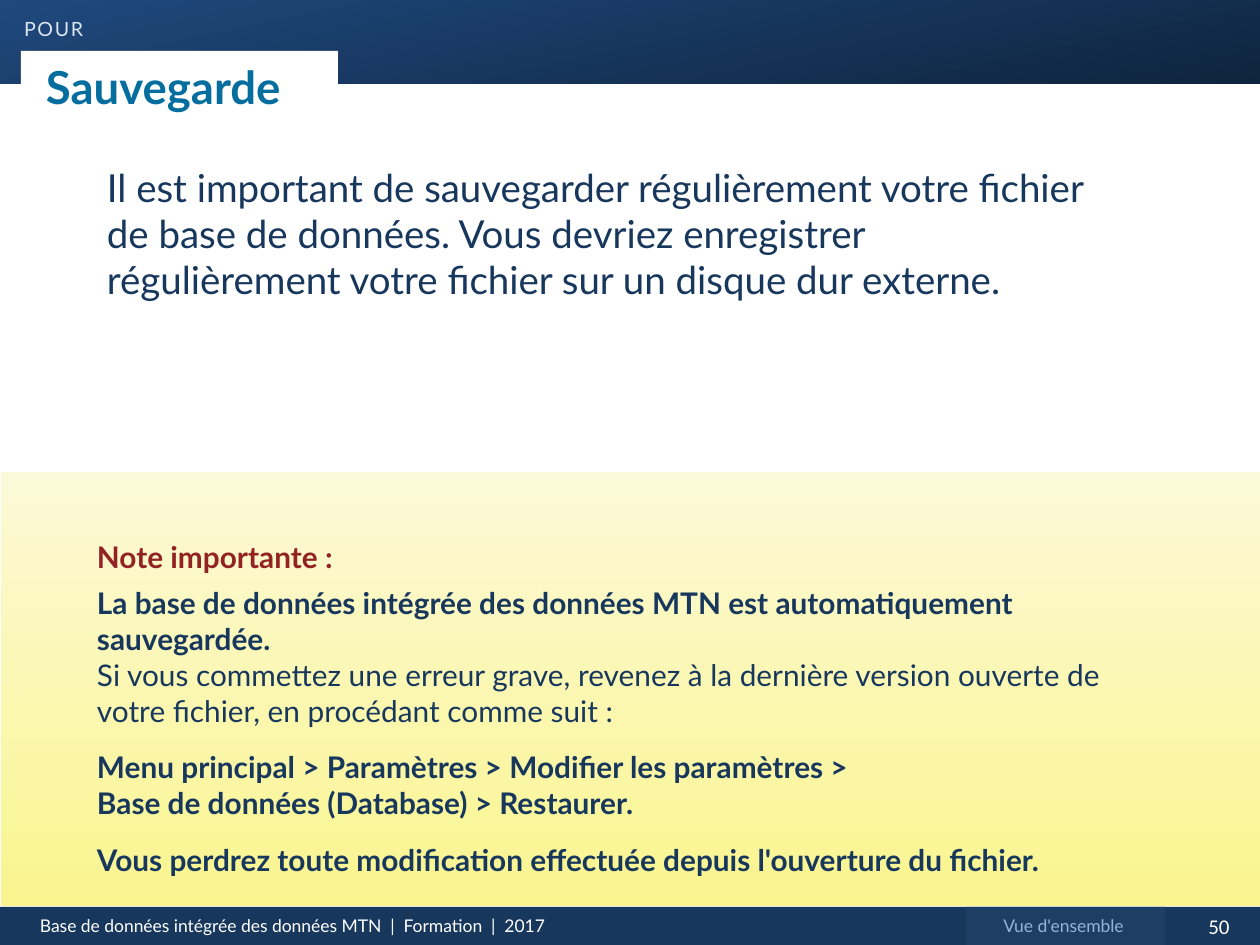
import pptx
import pptx.util
import pptx.dml.color
import pptx.enum.shapes
import pptx.enum.text

RGB = pptx.dml.color.RGBColor
SHAPE = pptx.enum.shapes.MSO_SHAPE
ALIGN = pptx.enum.text.PP_ALIGN
ANCHOR = pptx.enum.text.MSO_ANCHOR

WHITE = RGB(0xFF, 0xFF, 0xFF)
NAVY = RGB(0x17, 0x37, 0x5D)
TAB = RGB(0x1E, 0x3F, 0x65)
TOP = RGB(0x1F, 0x49, 0x7D), RGB(0x0F, 0x24, 0x3E)
YELLOW = RGB(0xFA, 0xF5, 0x8E), RGB(0xFC, 0xF9, 0xD8)
SKY = RGB(0x95, 0xB3, 0xD7)
PALE = RGB(0xDC, 0xE6, 0xF2)
TEAL = RGB(0x06, 0x6E, 0x9F)
RED = RGB(0x93, 0x23, 0x23)

SCALE = 914400 / 126
BREAK = "\n"

# Paragraphs: (space after in points, runs); runs: (text, colour, bold)
KICKER = [(0, [("pour", PALE, False)])]
TITLE = [(0, [("Sauvegarde", TEAL, True)])]
BODY = [(6, [("Il est important de sauvegarder régulièrement votre fichier "
              "de base de données. Vous devriez enregistrer régulièrement "
              "votre fichier sur un disque dur externe.", NAVY, False)])]
NOTE = [
    (6, [("Note importante :", RED, True)]),
    (12, [("La base de données intégrée des données MTN est "
           "automatiquement sauvegardée.", NAVY, True),
          BREAK,
          ("Si vous commettez une erreur grave, revenez à la dernière "
           "version ouverte de votre fichier, en procédant comme suit :",
           NAVY, False)]),
    (12, [("Menu principal > Paramètres > Modifier les paramètres >",
           NAVY, True),
          BREAK,
          ("Base de données (Database) > Restaurer.", NAVY, True)]),
    (0, [("Vous perdrez toute modification effectuée depuis l'ouverture "
          "du fichier.", NAVY, True)]),
]
FOOTER = [(0, [("Base de données intégrée des données MTN  |  Formation  |  "
                "2017", WHITE, False)])]
SECTION = [(0, [("Vue d'ensemble", SKY, False)])]
NUMBER = [(0, [("50", WHITE, False)])]


def px(n):
    return pptx.util.Emu(round(n * SCALE))


def add_block(slide, box, fill, angle=0, kind=SHAPE.RECTANGLE):
    """Add a borderless shape; a pair of colours makes a gradient."""
    block = slide.shapes.add_shape(kind, *map(px, box))
    block.shadow.inherit = False
    block.line.fill.background()
    if isinstance(fill, RGB):
        block.fill.solid()
        block.fill.fore_color.rgb = fill
    else:
        block.fill.gradient()
        block.fill.gradient_angle = angle
        for place, (stop, color) in enumerate(
                zip(block.fill.gradient_stops, fill)):
            stop.position = place
            stop.color.rgb = color
    return block


def write(shape, paras, size, font="Lato", align=ALIGN.LEFT,
          anchor=ANCHOR.TOP, inset=13):
    frame = shape.text_frame
    frame.word_wrap = True
    frame.vertical_anchor = anchor
    frame.margin_left = frame.margin_right = px(inset)
    frame.margin_top = frame.margin_bottom = px(6)
    for i, (after, runs) in enumerate(paras):
        para = frame.add_paragraph() if i else frame.paragraphs[0]
        para.alignment = align
        para.space_after = pptx.util.Pt(after)
        for item in runs:
            if item == BREAK:
                para.add_line_break()
                continue
            text, color, bold = item
            run = para.add_run()
            run.text = text
            run.font.name = font
            run.font.size = pptx.util.Pt(size)
            run.font.bold = bold
            run.font.color.rgb = color


def add_text(slide, box, paras, size, **style):
    text = slide.shapes.add_textbox(*map(px, box))
    write(text, paras, size, **style)
    return text


def main():
    deck = pptx.Presentation()
    deck.slide_width, deck.slide_height = px(1260), px(945)
    slide = deck.slides.add_slide(deck.slide_layouts[6])

    add_block(slide, (0, 0, 1261, 84), TOP, angle=282)
    add_block(slide, (0, 907, 1261, 40), NAVY)
    add_text(slide, (1178, 907, 82, 38), NUMBER, 12, font="Calibri",
             align=ALIGN.CENTER, anchor=ANCHOR.MIDDLE)
    add_text(slide, (27, 909, 571, 34), FOOTER, 10)
    add_block(slide, (966, 907, 199, 39), TAB)
    add_text(slide, (966, 909, 195, 34), SECTION, 10, align=ALIGN.CENTER)

    kicker = add_text(slide, (24, 6, 198, 43), KICKER, 14, inset=0)
    props = kicker.text_frame.paragraphs[0].runs[0].font._element
    props.set("cap", "small")
    props.set("spc", "100")

    add_text(slide, (94, 158, 1008, 199), BODY, 22)
    title = add_block(slide, (21, 51, 317, 71), WHITE,
                      kind=SHAPE.ROUND_2_SAME_RECTANGLE)
    title.adjustments[0] = 0
    write(title, TITLE, 26, anchor=ANCHOR.MIDDLE, inset=25)

    add_block(slide, (1, 472, 1260, 434), YELLOW, angle=90)
    add_text(slide, (84, 533, 1092, 318), NOTE, 17)
    deck.save("out.pptx")


if __name__ == "__main__":
    main()
